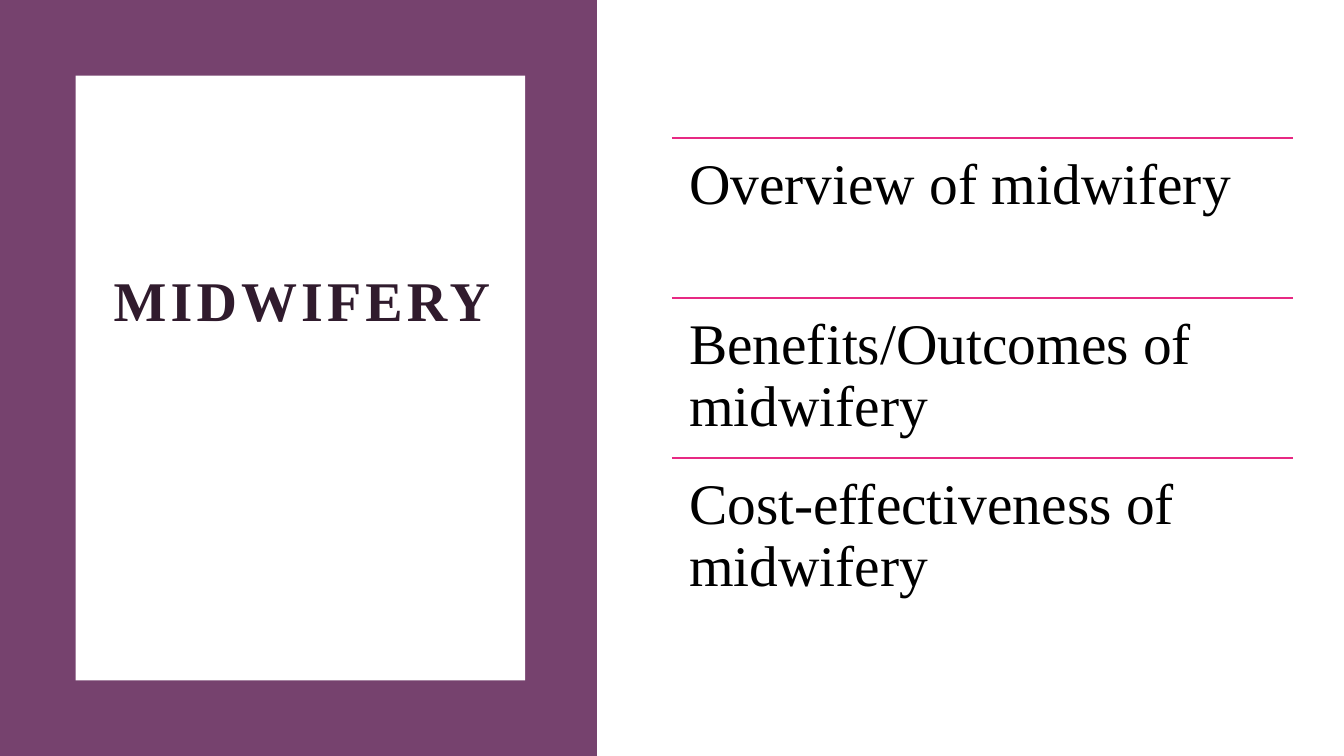
from lxml import etree
from pptx import Presentation
from pptx.dml.color import RGBColor
from pptx.enum.shapes import MSO_CONNECTOR, MSO_SHAPE
from pptx.enum.text import MSO_ANCHOR, PP_ALIGN
from pptx.oxml.ns import qn
from pptx.util import Inches, Pt

RECT = MSO_SHAPE.RECTANGLE
LINE = MSO_CONNECTOR.STRAIGHT
TOP, BOTTOM = MSO_ANCHOR.TOP, MSO_ANCHOR.BOTTOM
LEFT, CENTER = PP_ALIGN.LEFT, PP_ALIGN.CENTER

WIDE, HIGH = 13.33, 7.5
FACE = "Times New Roman"
HUES = {"plum": "76426E", "white": "FFFFFF", "dark": "301B2D",
        "pink": "E72983", "black": "000000"}
TITLE = "MIDWIFERY"
TOPICS = ["Overview of midwifery", "Benefits/Outcomes of midwifery",
          "Cost-effectiveness of midwifery"]

HEAD = {
    "frame": {"vertical_anchor": BOTTOM},
    "para": {"alignment": CENTER, "line_spacing": 0.9},
    "font": {"name": FACE, "size": Pt(40), "bold": True},
    "hue": "dark",
}
PAD = Inches(0.17)
ITEM = {
    "frame": {"vertical_anchor": TOP, "margin_left": PAD, "margin_top": PAD,
              "margin_right": PAD, "margin_bottom": PAD},
    "para": {"alignment": LEFT, "line_spacing": 0.9, "space_after": Pt(14)},
    "font": {"name": FACE, "size": Pt(41), "bold": False},
    "hue": "black",
}


def color(name):
    """Return the named colour."""
    return RGBColor.from_string(HUES[name])


def apply(part, values):
    """Set each attribute in values on part."""
    for name, value in values.items():
        setattr(part, name, value)


def add_block(slide, box, hue):
    """Add a plain filled rectangle."""
    block = slide.shapes.add_shape(RECT, *map(Inches, box))
    block.shadow.inherit = False
    block.fill.solid()
    block.fill.fore_color.rgb = color(hue)
    block.line.fill.background()


def add_text(slide, box, text, style):
    """Add a wrapped text box in the given style and return its run."""
    frame = slide.shapes.add_textbox(*map(Inches, box)).text_frame
    frame.word_wrap = True
    para = frame.paragraphs[0]
    run = para.add_run()
    run.text = text
    apply(frame, style["frame"])
    apply(para, style["para"])
    apply(run.font, style["font"])
    run.font.color.rgb = color(style["hue"])
    return run


def add_rule(slide, left, top, width):
    """Add a thin pink horizontal line."""
    ends = map(Inches, (left, top, left + width, top))
    rule = slide.shapes.add_connector(LINE, *ends)
    rule.line.color.rgb = color("pink")
    rule.line.width = Pt(1)
    etree.SubElement(rule._element.spPr, qn("a:effectLst"))


def add_panel(slide, box):
    """Add the plum panel with its white card and spaced title."""
    left, top, width, height = box
    edge = height / 10
    add_block(slide, box, "plum")
    add_block(slide, (left + edge, top + edge, 4.46, height - 2 * edge), "white")
    spot = (left + 0.94, top + 2.28, 4.11, 1.08)
    run = add_text(slide, spot, TITLE, HEAD)
    run._r.get_or_add_rPr().set("spc", "300")


def add_list(slide, box):
    """Add the topics in equal rows, each under a line."""
    left, top, width, height = box
    row = height / len(TOPICS)
    for index, topic in enumerate(TOPICS):
        level = top + index * row
        add_rule(slide, left, level, width)
        add_text(slide, (left, level, width, row), topic, ITEM)


def main():
    """Build and save the slide."""
    deck = Presentation()
    deck.slide_width, deck.slide_height = Inches(WIDE), Inches(HIGH)
    slide = deck.slides.add_slide(deck.slide_layouts[6])
    add_panel(slide, (0, 0, 5.92, HIGH))
    add_list(slide, (WIDE / 2, 1.37, 6.16, 4.76))
    deck.save("out.pptx")


if __name__ == "__main__":
    main()
